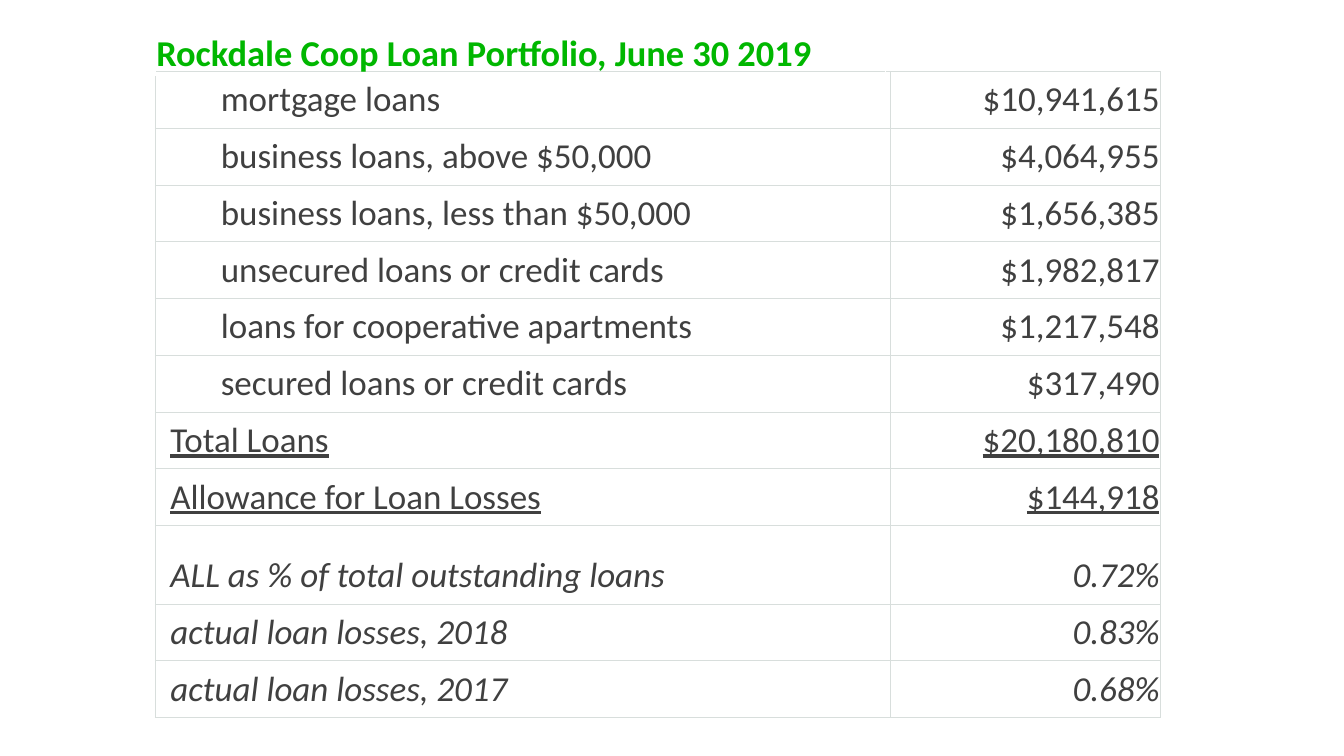
from pptx import Presentation
from pptx.dml.color import RGBColor
from pptx.enum.text import MSO_ANCHOR, PP_ALIGN
from pptx.util import Inches, Pt
from lxml import etree

BOTTOM = MSO_ANCHOR.BOTTOM
LEFT, RIGHT = PP_ALIGN.LEFT, PP_ALIGN.RIGHT
NS = "http://schemas.openxmlformats.org/drawingml/2006/main"

TITLE = "Rockdale Coop Loan Portfolio, June 30 2019"
GROUPS = [
    ("loan", [
        ("mortgage loans", "$10,941,615"),
        ("business loans, above $50,000", "$4,064,955"),
        ("business loans, less than $50,000", "$1,656,385"),
        ("unsecured loans or credit cards", "$1,982,817"),
        ("loans for cooperative apartments", "$1,217,548"),
        ("secured loans or credit cards", "$317,490"),
    ]),
    ("total", [
        ("Total Loans", "$20,180,810"),
        ("Allowance for Loan Losses", "$144,918"),
    ]),
    ("ratio", [
        ("ALL as % of total outstanding loans", "0.72%"),
        ("actual loan losses, 2018", "0.83%"),
        ("actual loan losses, 2017", "0.68%"),
    ]),
]
THEME = {
    "font": "Calibri",
    "title": {"size": 26, "color": "00B700", "bold": True,
              "rule": "FFFFFF", "line": 1, "inset": (0.01, 0.01, 0.01, 0)},
    "body": {"size": 25, "color": "404040", "bold": False,
             "rule": "D8DEDC", "line": 0.75, "inset": (0.15, 0.07, 0.01, 0.07)},
}
WIDE, HIGH = 13.33, 7.5
X, TOP, Y = 1.54, 0.3, 0.71
HEAD, COLS = (7.24,), (7.29, 2.68)
ROW, GAP = 0.53, 0.25


def border(cell, look):
    props = cell._tc.get_or_add_tcPr()
    for i, side in enumerate(("lnL", "lnR", "lnT", "lnB")):
        line = etree.Element(f"{{{NS}}}{side}", w=str(Pt(look["line"])))
        fill = etree.SubElement(line, f"{{{NS}}}solidFill")
        etree.SubElement(fill, f"{{{NS}}}srgbClr", val=look["rule"])
        props.insert(i, line)


def fill_cell(cell, text, look):
    cell.fill.background()
    border(cell, look)
    (cell.margin_left, cell.margin_top, cell.margin_right,
     cell.margin_bottom) = map(Inches, look["inset"])
    cell.vertical_anchor = BOTTOM
    para = cell.text_frame.paragraphs[0]
    para.text = text
    font = para.runs[0].font
    font.name = THEME["font"]
    font.size = Pt(look["size"])
    font.bold = look["bold"]
    font.color.rgb = RGBColor.from_string(look["color"])
    return para


def add_grid(slide, y, cols, rows):
    frame = slide.shapes.add_table(
        len(rows), len(cols), Inches(X), Inches(y),
        Inches(sum(cols)), Inches(sum(rows)))
    table = frame.table
    table.first_row = table.horz_banding = False
    for col, width in zip(table.columns, cols):
        col.width = Inches(width)
    for row, height in zip(table.rows, rows):
        row.height = Inches(height)
    return table


def add_loans(slide):
    rows = [(kind, n, pair) for kind, pairs in GROUPS
            for n, pair in enumerate(pairs)]
    sizes = [ROW + GAP * (kind == "ratio" and n == 0) for kind, n, _ in rows]
    table = add_grid(slide, Y, COLS, sizes)
    for r, (kind, _, pair) in enumerate(rows):
        for c, text in enumerate(pair):
            para = fill_cell(table.cell(r, c), text, THEME["body"])
            para.alignment = RIGHT if c else LEFT
            font = para.runs[0].font
            font.underline = kind == "total"
            font.italic = kind == "ratio"
            if kind == "loan" and c == 0:
                para.level = 1
                para._p.get_or_add_pPr().set("marL", str(Inches(0.5)))


def add_title(slide):
    table = add_grid(slide, TOP, HEAD, (0.3,))
    fill_cell(table.cell(0, 0), TITLE, THEME["title"])


def main():
    deck = Presentation()
    deck.slide_width, deck.slide_height = Inches(WIDE), Inches(HIGH)
    slide = deck.slides.add_slide(deck.slide_layouts[6])
    add_loans(slide)
    add_title(slide)
    deck.save("out.pptx")


if __name__ == "__main__":
    main()
